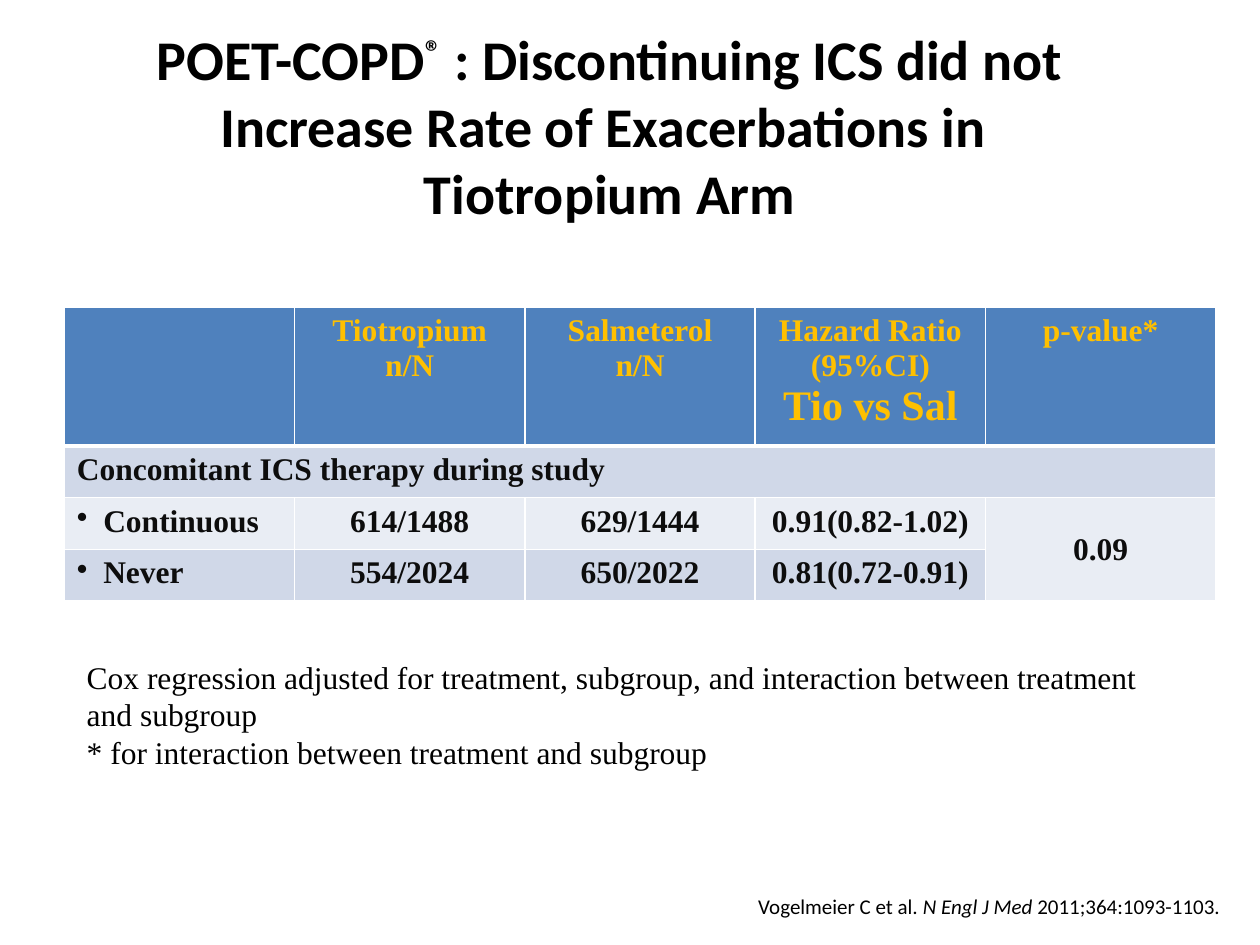
from dataclasses import dataclass

from lxml import etree
from pptx import Presentation
from pptx import util as u
from pptx.dml.color import RGBColor
from pptx.enum import text as t
from pptx.oxml.ns import qn

WIDE, HIGH = 10, 7.5
MID, LEFT, RIGHT = t.PP_ALIGN.CENTER, t.PP_ALIGN.LEFT, t.PP_ALIGN.RIGHT


@dataclass(frozen=True)
class Theme:
    ink: str = "000000"
    soft: str = "0D0D0D"
    gold: str = "FFC000"
    blue: str = "4F81BD"
    band: str = "D0D8E8"
    pale: str = "E9EDF4"
    line: str = "FFFFFF"
    sans: str = "Calibri"
    serif: str = "Times New Roman"
    title: int = 32
    large: int = 24
    body: int = 18
    small: int = 12


LOOK = Theme()

HEAD = [
    [],
    ["Tiotropium", "n/N"],
    ["Salmeterol", "n/N"],
    ["Hazard Ratio (95%CI)", [("Tio vs Sal", {"size": LOOK.large})]],
    ["p-value*"],
]
GROUP = "Concomitant ICS therapy during study"
ROWS = [
    ["Continuous", "614/1488", "629/1444", "0.91(0.82-1.02)", "0.09"],
    ["Never", "554/2024", "650/2022", "0.81(0.72-0.91)"],
]


def across(share):
    return u.Inches(WIDE * share / 100)


def down(share):
    return u.Inches(HIGH * share / 100)


def style(run, size, face, tint, bold=False, slant=False, lift=0):
    font = run.font
    font.size, font.name = u.Pt(size), face
    font.bold, font.italic = bold, slant
    font.color.rgb = RGBColor.from_string(tint)
    if lift:
        run._r.get_or_add_rPr().set("baseline", str(lift * 1000))


def bullet(para):
    props = para._p.get_or_add_pPr()
    gap = u.Inches(0.21)
    props.set("marL", str(gap))
    props.set("indent", str(-gap))
    etree.SubElement(props, qn("a:buChar"), char="•")


def write(frame, paras, align=LEFT, dot=False, **form):
    for i, parts in enumerate(paras):
        para = frame.add_paragraph() if i else frame.paragraphs[0]
        para.alignment = align
        if dot:
            bullet(para)
        if isinstance(parts, str):
            parts = [(parts, {})]
        for words, extra in parts:
            for j, line in enumerate(words.split("\n")):
                if j:
                    para.add_line_break()
                run = para.add_run()
                run.text = line
                style(run, **{**form, **extra})


def box(slide, area, paras, anchor=t.MSO_ANCHOR.TOP, inset=True, **form):
    x, y, w, h = area
    shape = slide.shapes.add_textbox(across(x), down(y), across(w), down(h))
    frame = shape.text_frame
    frame.word_wrap = True
    frame.vertical_anchor = anchor
    if not inset:
        frame.margin_left = frame.margin_right = 0
        frame.margin_top = frame.margin_bottom = 0
    write(frame, paras, **form)


def paint(cell, row, tint):
    props = cell._tc.get_or_add_tcPr()
    for side in ("lnL", "lnR", "lnT", "lnB"):
        thick = (row, side) in ((0, "lnB"), (1, "lnT"))
        edge = etree.SubElement(props, qn(f"a:{side}"), w=str(u.Pt(3 if thick else 1)))
        fill = etree.SubElement(edge, qn("a:solidFill"))
        etree.SubElement(fill, qn("a:srgbClr"), val=LOOK.line)
    cell.fill.solid()
    cell.fill.fore_color.rgb = RGBColor.from_string(tint)


def table(slide):
    x, y, wide, head, row = 5.1, 32.53, 91.4, 13.47, 5.47
    grid = slide.shapes.add_table(
        4, 5, across(x), down(y), across(wide), down(head + 3 * row)
    ).table
    for i, line in enumerate(grid.rows):
        line.height = down(row if i else head)
    for r, tint in enumerate((LOOK.blue, LOOK.band, LOOK.pale, LOOK.band)):
        for c in range(5):
            last = r == 3 and c == 4
            paint(grid.cell(r, c), r, LOOK.pale if last else tint)
    grid.cell(1, 0).merge(grid.cell(1, 4))
    grid.cell(2, 4).merge(grid.cell(3, 4))
    grid.cell(2, 4).vertical_anchor = t.MSO_ANCHOR.MIDDLE

    form = dict(size=LOOK.body, face=LOOK.serif, bold=True)
    for c, paras in enumerate(HEAD):
        write(grid.cell(0, c).text_frame, paras, align=MID, tint=LOOK.gold, **form)
    form["tint"] = LOOK.soft
    write(grid.cell(1, 0).text_frame, [GROUP], **form)
    for r, words in enumerate(ROWS, 2):
        for c, word in enumerate(words):
            write(grid.cell(r, c).text_frame, [word],
                  align=MID if c else LEFT, dot=c == 0, **form)


def main():
    deck = Presentation()
    deck.slide_width, deck.slide_height = u.Inches(WIDE), u.Inches(HIGH)
    slide = deck.slides.add_slide(deck.slide_layouts[6])

    title = [
        ("POET-COPD", {}),
        ("®", {"lift": 30}),
        (" : Discontinuing ICS did not Increase Rate of Exacerbations in \nTiotropium Arm", {}),
    ]
    box(slide, (3.5, 4.93, 89.8, 16.67), [title], anchor=t.MSO_ANCHOR.MIDDLE,
        align=MID, size=LOOK.title, face=LOOK.sans, tint=LOOK.ink, bold=True)
    table(slide)
    notes = [
        "Cox regression adjusted for treatment, subgroup, and interaction between treatment and subgroup",
        "* for interaction between treatment and subgroup",
    ]
    box(slide, (5.9, 68.93, 89, 13.47), notes,
        size=LOOK.body, face=LOOK.serif, tint=LOOK.ink)
    cite = [
        ("Vogelmeier C et al", {}),
        (". N Engl J Med ", {"slant": True}),
        ("2011;364:1093-1103. ", {}),
    ]
    box(slide, (31.9, 92, 65.3, 5.2), [cite], anchor=t.MSO_ANCHOR.BOTTOM,
        inset=False, align=RIGHT, size=LOOK.small, face=LOOK.sans, tint=LOOK.ink)
    deck.save("out.pptx")


if __name__ == "__main__":
    main()
